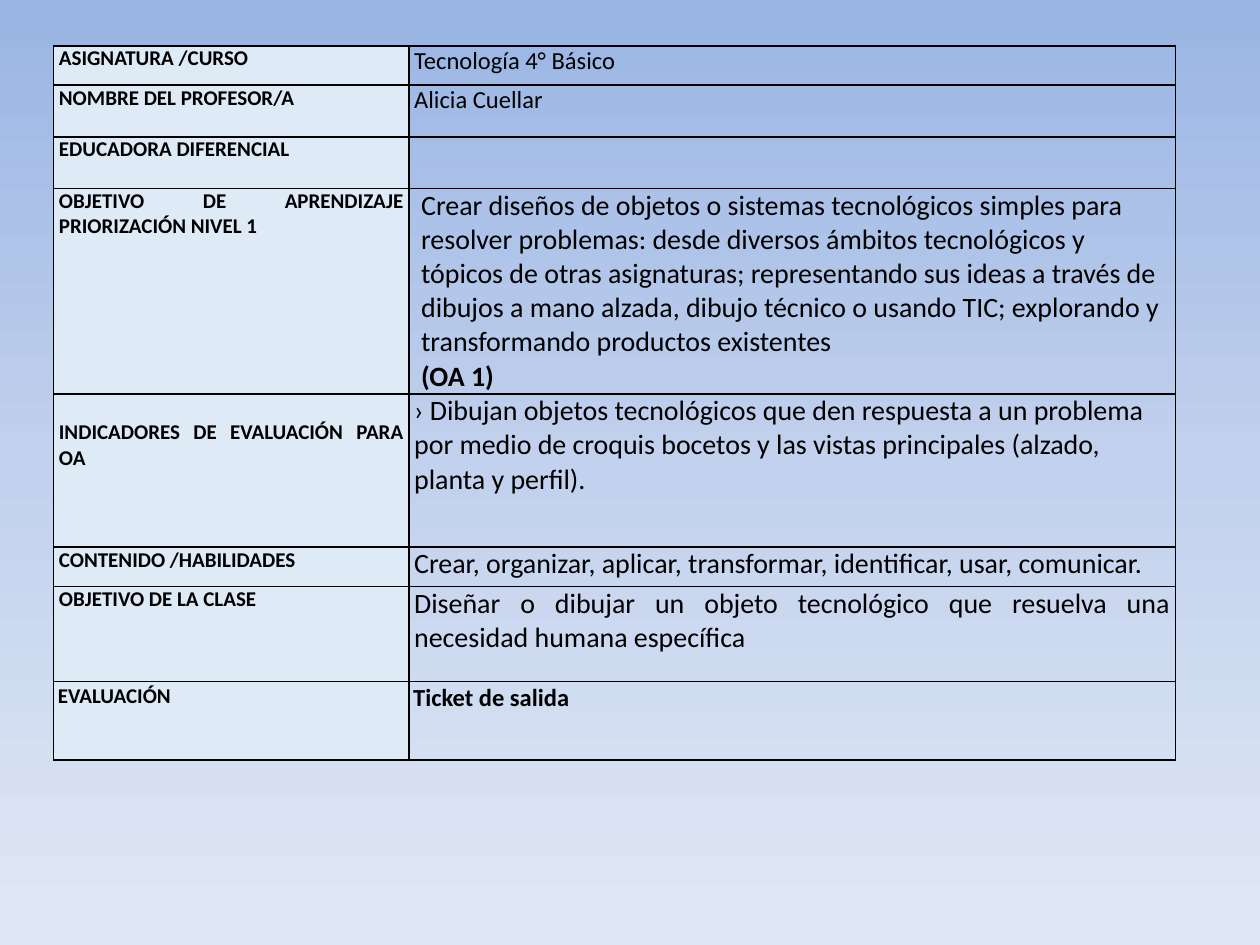
from copy import deepcopy

from lxml import etree
from pptx import Presentation
from pptx.dml.color import RGBColor
from pptx.enum import text
from pptx.oxml.ns import qn
from pptx.util import Pt

BLACK = RGBColor(0x00, 0x00, 0x00)
PALE = RGBColor(0xDE, 0xEA, 0xF6)
SKY = [(0, RGBColor(0x9A, 0xB5, 0xE4)),
       (0.5, RGBColor(0xC2, 0xD1, 0xED)),
       (1, RGBColor(0xE1, 0xE8, 0xF5))]
FONT = "Calibri"
LEFT, JUST = text.PP_ALIGN.LEFT, text.PP_ALIGN.JUSTIFY
SIDE = 3  # usual side margin of a cell

# height, label, label top margin, body size, body align, body side margin,
# body paragraphs as (text, bold)
ROWS = [
    (22.5, "ASIGNATURA /CURSO", 0, 14, JUST, SIDE,
     [("Tecnología 4° Básico", False)]),
    (29.5, "NOMBRE DEL PROFESOR/A", 0, 14, JUST, SIDE,
     [("Alicia Cuellar", False)]),
    (29.5, "EDUCADORA DIFERENCIAL", 0, 14, JUST, SIDE, []),
    (117.5, "OBJETIVO DE APRENDIZAJE PRIORIZACIÓN NIVEL 1", 0, 16, LEFT, 7,
     [("Crear diseños de objetos o sistemas tecnológicos simples para "
       "resolver problemas: desde diversos ámbitos tecnológicos y tópicos "
       "de otras asignaturas; representando sus ideas a través de dibujos "
       "a mano alzada, dibujo técnico o usando TIC; explorando y "
       "transformando productos existentes", False),
      ("(OA 1)", True)]),
    (87.5, "INDICADORES DE EVALUACIÓN PARA OA", 14.6, 16, LEFT, SIDE,
     [("› Dibujan objetos tecnológicos que den respuesta a un problema por "
       "medio de croquis bocetos y las vistas principales (alzado, planta y "
       "perfil).", False)]),
    (22.5, "CONTENIDO /HABILIDADES", 0, 16, JUST, SIDE,
     [("Crear, organizar, aplicar, transformar, identificar, usar, "
       "comunicar.", False)]),
    (54.3, "OBJETIVO DE LA CLASE", 0, 16, JUST, SIDE,
     [("Diseñar o dibujar un objeto tecnológico que resuelva una necesidad "
       "humana específica", False)]),
    (45, "EVALUACIÓN", 1, 14, JUST, 2.4, [("Ticket de salida", True)]),
]


def paint_back(slide):
    fill = slide.background.fill
    fill.gradient()
    fill.gradient_angle = 270
    stops = next(slide.element.iter(qn("a:gsLst")))
    stops.append(deepcopy(stops[0]))
    for stop, (place, color) in zip(fill.gradient_stops, SKY):
        stop.position = place
        stop.color.rgb = color


def add_edges(cell):
    props = cell._tc.get_or_add_tcPr()
    for tag in ("a:lnL", "a:lnR", "a:lnT", "a:lnB"):
        line = etree.SubElement(props, qn(tag), w=str(Pt(1)))
        solid = etree.SubElement(line, qn("a:solidFill"))
        etree.SubElement(solid, qn("a:srgbClr"), val=str(BLACK))


def fill_cell(cell, paras, size, align, side, top=0, color=None):
    """Write (text, bold) paragraphs; without a color the cell is clear."""
    add_edges(cell)
    if color is None:
        cell.fill.background()
    else:
        cell.fill.solid()
        cell.fill.fore_color.rgb = color
    cell.margin_left = cell.margin_right = Pt(side)
    cell.margin_top, cell.margin_bottom = Pt(top), Pt(0)
    frame = cell.text_frame
    for i, (words, bold) in enumerate(paras):
        para = frame.add_paragraph() if i else frame.paragraphs[0]
        para.alignment = align
        run = para.add_run()
        run.text = words
        font = run.font
        font.name, font.size, font.bold = FONT, Pt(size), bold
        font.color.rgb = BLACK


def add_plan(slide, left, top, width):
    high = sum(row[0] for row in ROWS)
    table = slide.shapes.add_table(
        len(ROWS), 2, Pt(left), Pt(top), Pt(width), Pt(high)).table
    table.first_row = table.horz_banding = False
    first = 203
    table.columns[0].width = Pt(first)
    table.columns[1].width = Pt(width - first)
    for i, (tall, label, drop, size, align, side, paras) in enumerate(ROWS):
        table.rows[i].height = Pt(tall)
        fill_cell(table.cell(i, 0), [(label, True)], 12, JUST,
                  min(side, SIDE), drop, PALE)
        fill_cell(table.cell(i, 1), paras, size, align, side, min(drop, 1)
                  if label == "EVALUACIÓN" else 0)


def main():
    deck = Presentation()
    deck.slide_width, deck.slide_height = Pt(720), Pt(540)
    slide = deck.slides.add_slide(deck.slide_layouts[6])
    paint_back(slide)
    add_plan(slide, 30.7, 26.2, 641)
    deck.save("out.pptx")


if __name__ == "__main__":
    main()
